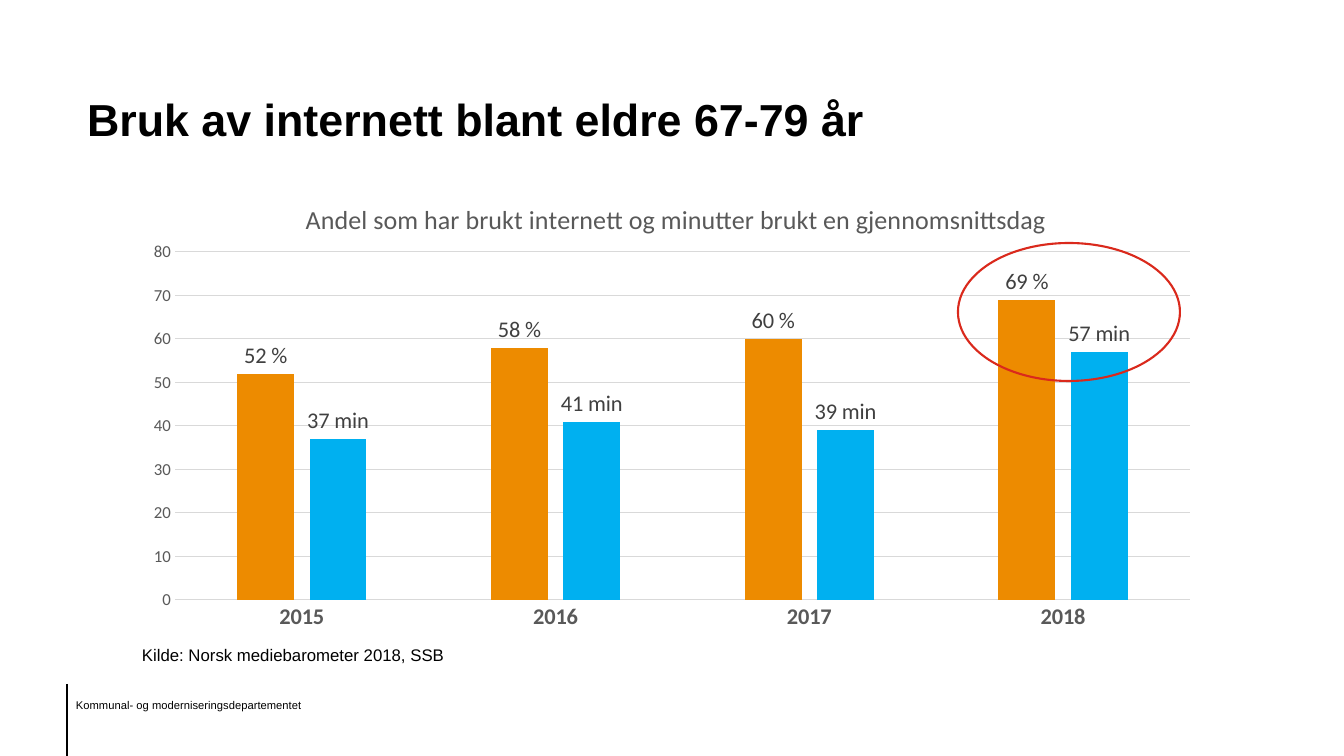
from dataclasses import dataclass
from lxml import etree
from pptx import Presentation
from pptx.chart.data import CategoryChartData
from pptx.dml.color import RGBColor
from pptx.enum.chart import XL_CHART_TYPE, XL_LABEL_POSITION, XL_TICK_MARK
from pptx.enum.shapes import MSO_CONNECTOR, MSO_SHAPE
from pptx.enum.text import MSO_ANCHOR, PP_ALIGN
from pptx.oxml import parse_xml
from pptx.oxml.ns import nsdecls, qn
from pptx.util import Emu, Pt

COLUMNS = XL_CHART_TYPE.COLUMN_CLUSTERED
OUTSIDE = XL_LABEL_POSITION.OUTSIDE_END
NO_TICK = XL_TICK_MARK.NONE
STRAIGHT = MSO_CONNECTOR.STRAIGHT
OVAL = MSO_SHAPE.OVAL
LEFT = PP_ALIGN.LEFT
TOP, BOTTOM = MSO_ANCHOR.TOP, MSO_ANCHOR.BOTTOM

# Content
TITLE = "Bruk av internett blant eldre 67-79 år"
HEAD = "Andel som har brukt internett og minutter brukt en gjennomsnittsdag"
SOURCE = "Kilde: Norsk mediebarometer 2018, SSB"
OWNER = "Kommunal- og moderniseringsdepartementet"
YEARS = ["2015", "2016", "2017", "2018"]
SERIES = [
    # name, values, label format, colour
    ("Series 1", (52, 58, 60, 69), '0" %"', "ED8B00"),
    ("Series 2", (37, 41, 39, 57), '0" min"', "00B0F0"),
]

# Places in px: left, top, width, height
SIZE = (1344, 756)
TITLE_BOX = (77, 25, 1080, 126)
CHART_BOX = (132, 175, 1080, 465)
PLOT_BOX = (175, 252, 1015, 348)
HEAD_AT = (301, 196)
SOURCE_BOX = (132, 640, 381, 30)
OWNER_BOX = (66, 695, 285, 22)
RING_BOX = (958, 243, 222, 138)
RULE = (67, 684, 67, 756)


@dataclass(frozen=True)
class Theme:
    ink: str = "000000"
    grey: str = "595959"
    dark: str = "404040"
    grid: str = "D9D9D9"
    ring: str = "DA291C"
    text: str = "Arial"
    chart: str = "Calibri"


T = Theme()
FONTS = {
    "title": dict(name=T.text, size=32, bold=True, color=T.ink),
    "source": dict(name=T.text, size=12, bold=False, color=T.ink),
    "owner": dict(name=T.text, size=8, bold=False, color=T.ink),
    "chart": dict(name=T.chart, size=10, bold=False, color=T.ink),
    "head": dict(name=T.chart, size=18.6, bold=False, color=T.grey),
    "years": dict(name=T.chart, size=16, bold=True, color=T.grey),
    "scale": dict(name=T.chart, size=12, bold=False, color=T.grey),
    "label": dict(name=T.chart, size=16, bold=False, color=T.dark),
}


def px(*vals):
    return [Emu(round(v * 914400 / 100.8)) for v in vals]


def style(font, kind):
    for key, val in FONTS[kind].items():
        if key == "color":
            font.color.rgb = RGBColor.from_string(val)
        else:
            setattr(font, key, Pt(val) if key == "size" else val)


def stroke(line, color, width):
    line.color.rgb = RGBColor.from_string(color)
    line.width = Pt(width)


def write(shape, text, kind, anchor=TOP):
    frame = shape.text_frame
    frame.word_wrap = True
    frame.vertical_anchor = anchor
    par = frame.paragraphs[0]
    par.text = text
    par.alignment = LEFT
    style(par.runs[0].font, kind)
    return par


def layout(x, y, w=None, h=None):
    """Chart layout in shares of the chart box."""
    cx, cy, cw, ch = CHART_BOX
    vals = {"xMode": "edge", "yMode": "edge",
            "x": round((x - cx) / cw, 4), "y": round((y - cy) / ch, 4)}
    if w:
        vals = {"layoutTarget": "inner", **vals,
                "w": round(w / cw, 4), "h": round(h / ch, 4)}
    tags = "".join(f'<c:{k} val="{v}"/>' for k, v in vals.items())
    return parse_xml(f'<c:layout {nsdecls("c")}><c:manualLayout>{tags}'
                     '</c:manualLayout></c:layout>')


def place(node, lay, after=None):
    for old in node.findall(qn("c:layout")):
        node.remove(old)
    if after is None:
        node.insert(0, lay)
    else:
        after.addnext(lay)


def draw_chart(slide):
    data = CategoryChartData()
    data.categories = YEARS
    for name, vals, _, _ in SERIES:
        data.add_series(name, vals)
    chart = slide.shapes.add_chart(COLUMNS, *px(*CHART_BOX), data).chart
    style(chart.font, "chart")
    chart.has_legend = False

    # Chart heading
    chart.has_title = True
    head = chart.chart_title
    head.include_in_layout = False
    par = head.text_frame.paragraphs[0]
    par.text = HEAD
    style(par.runs[0].font, "head")
    node = chart.element.chart.find(qn("c:title"))
    place(node, layout(*HEAD_AT), node.find(qn("c:tx")))
    place(chart.element.chart.plotArea, layout(*PLOT_BOX))

    # Axes
    years, scale = chart.category_axis, chart.value_axis
    for axis, kind in ((years, "years"), (scale, "scale")):
        axis.major_tick_mark = axis.minor_tick_mark = NO_TICK
        style(axis.tick_labels.font, kind)
    stroke(years.format.line, T.grid, 0.75)
    scale.format.line.fill.background()
    scale.minimum_scale, scale.maximum_scale, scale.major_unit = 0, 80, 10
    stroke(scale.major_gridlines.format.line, T.grid, 0.75)

    # Columns
    plot = chart.plots[0]
    plot.vary_by_categories = False
    plot.gap_width, plot.overlap = 219, -27
    for row, (_, _, form, color) in zip(plot.series, SERIES):
        row.format.fill.solid()
        row.format.fill.fore_color.rgb = RGBColor.from_string(color)
        tags = row.data_labels
        tags.show_value = True
        tags.number_format = form
        tags.number_format_is_linked = False
        tags.position = OUTSIDE
        style(tags.font, "label")


def main():
    deck = Presentation()
    deck.slide_width, deck.slide_height = px(*SIZE)
    slide = deck.slides.add_slide(deck.slide_layouts[5])
    shapes = slide.shapes

    # Footer
    owner = shapes.add_textbox(*px(*OWNER_BOX))
    write(owner, OWNER, "owner").line_spacing = 0.9
    rule = shapes.add_connector(STRAIGHT, *px(*RULE))
    stroke(rule.line, T.ink, 0.75)
    etree.SubElement(rule.element.spPr, qn("a:effectLst"))

    # Title
    title = shapes.title
    title.left, title.top, title.width, title.height = px(*TITLE_BOX)
    write(title, TITLE, "title", BOTTOM)

    # Chart, source and ring
    draw_chart(slide)
    write(shapes.add_textbox(*px(*SOURCE_BOX)), SOURCE, "source")
    ring = shapes.add_shape(OVAL, *px(*RING_BOX))
    ring.shadow.inherit = False
    ring.fill.background()
    stroke(ring.line, T.ring, 1.5)

    deck.save("out.pptx")


if __name__ == "__main__":
    main()
